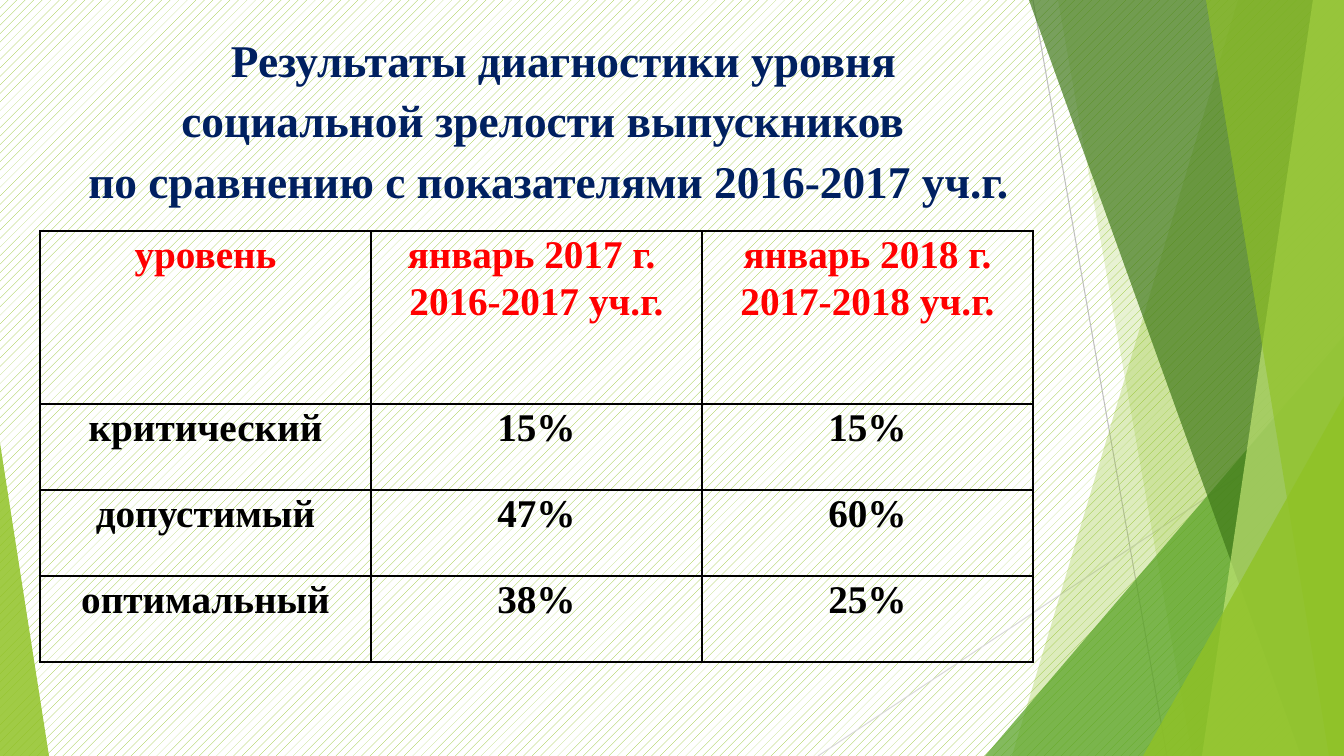
from lxml.etree import SubElement
from pptx import Presentation
from pptx.dml.color import RGBColor
from pptx.enum.dml import MSO_PATTERN
from pptx.enum.shapes import MSO_CONNECTOR, MSO_SHAPE
from pptx.enum.text import MSO_ANCHOR, PP_ALIGN
from pptx.oxml.ns import qn
from pptx.util import Emu, Pt

EMU_PER_PX = 914400 / 100.8
WIDTH, HEIGHT = 1344, 756


def px(n):
    return Emu(round(n * EMU_PER_PX))


def rgb(value):
    return RGBColor.from_string(value)


class SlideBuilder:
    font = "Times New Roman"
    navy, red, black = "002060", "FF0000", "000000"
    lime, green, forest, pale = "90C226", "54A021", "3F7819", "C0E474"

    def __init__(self, prs):
        self.s = prs.slides.add_slide(prs.slide_layouts[6])

    def background(self, fore, back):
        fill = self.s.background.fill
        fill.patterned()
        fill.pattern = MSO_PATTERN.PERCENT_20
        fill.fore_color.rgb = rgb(fore)
        fill.back_color.rgb = rgb(back)

    def line(self, x1, y1, x2, y2, color):
        cn = self.s.shapes.add_connector(
            MSO_CONNECTOR.STRAIGHT, px(x1), px(y1), px(x2), px(y2))
        cn.line.color.rgb = rgb(color)
        cn.line.width = Pt(0.75)
        SubElement(cn._element.spPr, qn("a:effectLst"))

    def paint(self, sp, color, opacity):
        sp.shadow.inherit = False
        sp.fill.solid()
        sp.fill.fore_color.rgb = rgb(color)
        clr = sp._element.spPr.find(qn("a:solidFill")).find(qn("a:srgbClr"))
        SubElement(clr, qn("a:alpha"), val=str(opacity * 1000))
        sp.line.fill.background()

    def band(self, top, bottom, color, opacity):
        """Area from a slanted edge to the right side of the slide."""
        fb = self.s.shapes.build_freeform(top, 0, scale=EMU_PER_PX)
        fb.add_line_segments([(WIDTH, 0), (WIDTH, HEIGHT), (bottom, HEIGHT)])
        self.paint(fb.convert_to_shape(), color, opacity)

    def triangle(self, x, y, w, apex, color, opacity):
        """Triangle standing on the bottom of the slide."""
        sp = self.s.shapes.add_shape(
            MSO_SHAPE.ISOSCELES_TRIANGLE, px(x), px(y), px(w), px(HEIGHT - y))
        sp.adjustments[0] = apex
        self.paint(sp, color, opacity)

    def set_text(self, tf, text, size, color, spacing):
        tf.text = text
        tf.word_wrap = True
        for p in tf.paragraphs:
            p.alignment = PP_ALIGN.CENTER
            p.line_spacing = spacing
            for r in p.runs:
                r.font.name = self.font
                r.font.size = Pt(size)
                r.font.bold = True
                r.font.color.rgb = rgb(color)

    def title(self, x, y, w, h, text):
        tf = self.s.shapes.add_textbox(px(x), px(y), px(w), px(h)).text_frame
        tf.vertical_anchor = MSO_ANCHOR.TOP
        self.set_text(tf, text, 32.4, self.navy, 1.11)
        tf.paragraphs[0]._p.get_or_add_pPr().set("indent", str(px(30)))

    def borders(self, cell):
        tc_pr = cell._tc.get_or_add_tcPr()
        for side in ("a:lnL", "a:lnR", "a:lnT", "a:lnB"):
            ln = SubElement(tc_pr, qn(side), w=str(Pt(1)))
            fill = SubElement(ln, qn("a:solidFill"))
            SubElement(fill, qn("a:srgbClr"), val=self.black)

    def table(self, x, y, col_w, row_heights, rows):
        n_cols = len(rows[0])
        tbl = self.s.shapes.add_table(
            len(rows), n_cols, px(x), px(y),
            px(col_w * n_cols), px(sum(row_heights))).table
        tbl.first_row = tbl.horz_banding = False
        for col in tbl.columns:
            col.width = px(col_w)
        for i, (height, values) in enumerate(zip(row_heights, rows)):
            tbl.rows[i].height = px(height)
            for j, text in enumerate(values):
                cell = tbl.cell(i, j)
                cell.margin_left = cell.margin_right = px(7)
                cell.margin_top = cell.margin_bottom = 0
                self.borders(cell)
                cell.fill.background()
                self.set_text(cell.text_frame, text, 28,
                              self.black if i else self.red, 1.07)


def main():
    prs = Presentation()
    prs.slide_width, prs.slide_height = px(WIDTH), px(HEIGHT)
    b = SlideBuilder(prs)
    b.background(b.lime, "FFFFFF")

    # Facets on the right and the wedge on the left
    b.line(1033, 0, 1167, HEIGHT, "BFBFBF")
    b.line(WIDTH, 406, 818, HEIGHT, "D9D9D9")
    b.band(1238, 1012, b.lime, 30)
    b.band(1058, 1192, b.lime, 20)
    b.triangle(985, 336, 359, 1, b.green, 72)
    b.band(1029, 1301, b.forest, 70)
    b.band(1313, 1202, b.pale, 70)
    b.band(1206, 1329, b.lime, 65)
    b.triangle(1143, 396, 201, 1, b.lime, 80)
    b.triangle(0, 443, 49, 0, b.lime, 85)

    # Title
    b.title(75, 21, 947, 193,
            "Результаты диагностики уровня социальной зрелости выпускников \v"
            "по сравнению с показателями 2016-2017 уч.г.")

    # Results by level
    b.table(40, 231, 331, [173, 86, 86, 86], [
        ["уровень", "январь 2017 г. \n2016-2017 уч.г.",
         "январь 2018 г.\n2017-2018 уч.г."],
        ["критический", "15%", "15%"],
        ["допустимый", "47%", "60%"],
        ["оптимальный", "38%", "25%"],
    ])

    prs.save("out.pptx")


if __name__ == "__main__":
    main()
